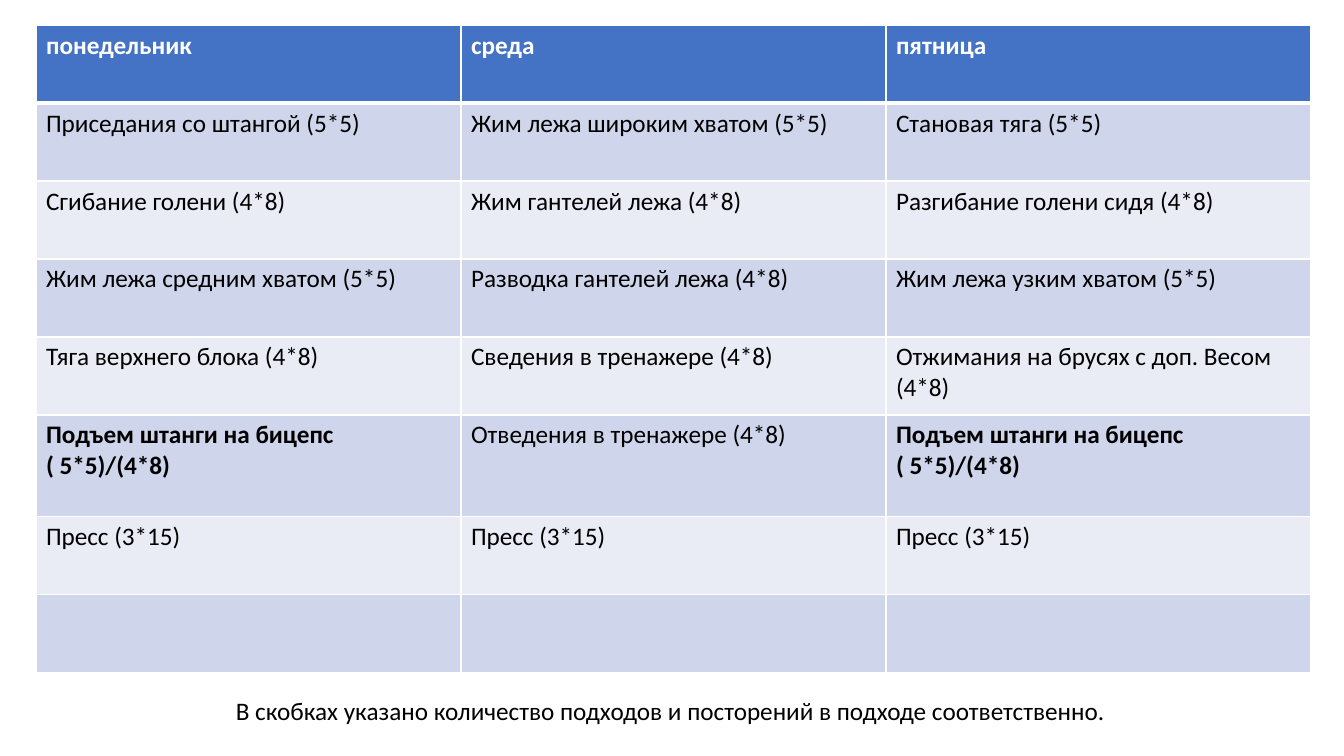
from typing import NamedTuple

from lxml.etree import SubElement
from pptx import Presentation
from pptx.dml.color import RGBColor
from pptx.enum.text import MSO_AUTO_SIZE
from pptx.oxml.ns import qn
from pptx.text.text import TextFrame
from pptx.util import Emu, Pt

SLIDE_WIDTH, SLIDE_HEIGHT = 1344, 756
EMU_PER_PX = 12192000 / SLIDE_WIDTH

WHITE = RGBColor(0xFF, 0xFF, 0xFF)
BLACK = RGBColor(0x00, 0x00, 0x00)
HEADER_BLUE = RGBColor(0x44, 0x72, 0xC4)
BAND_DARK = RGBColor(0xCF, 0xD5, 0xEA)
BAND_LIGHT = RGBColor(0xE9, 0xEB, 0xF5)

FONT_NAME = "Calibri"
FONT_SIZE = Pt(18)

TABLE_LEFT, TABLE_TOP = 36, 25
COLUMN_WIDTH = 425
ROW_HEIGHT, TALL_ROW_HEIGHT = 78, 102

DAYS = ("понедельник", "среда", "пятница")
BICEPS = "Подъем штанги на бицепс\n( 5*5)/(4*8)"
PRESS = "Пресс (3*15)"
NOTE = "В скобках указано количество подходов и посторений в подходе соответственно."


class TrainingRow(NamedTuple):
    texts: tuple[str, ...]
    height: int = ROW_HEIGHT


ROWS = (
    TrainingRow(DAYS),
    TrainingRow(("Приседания со штангой (5*5)", "Жим лежа широким хватом (5*5)",
                 "Становая тяга (5*5)")),
    TrainingRow(("Сгибание голени (4*8)", "Жим гантелей лежа (4*8)",
                 "Разгибание голени сидя (4*8)")),
    TrainingRow(("Жим лежа средним хватом (5*5)", "Разводка гантелей лежа (4*8)",
                 "Жим лежа узким хватом (5*5)")),
    TrainingRow(("Тяга верхнего блока (4*8)", "Сведения в тренажере (4*8)",
                 "Отжимания на брусях с доп. Весом (4*8)")),
    TrainingRow((BICEPS, "Отведения в тренажере (4*8)", BICEPS), TALL_ROW_HEIGHT),
    TrainingRow((PRESS,) * len(DAYS)),
    TrainingRow(("",) * len(DAYS)),
)


def px(length: int) -> Emu:
    return Emu(round(length * EMU_PER_PX))


def write_text(text_frame: TextFrame, text: str, color: RGBColor, bold: bool) -> None:
    text_frame.text = text
    for paragraph in text_frame.paragraphs:
        for run in paragraph.runs:
            run.font.name = FONT_NAME
            run.font.size = FONT_SIZE
            run.font.bold = bold
            run.font.color.rgb = color


def add_borders(cell, top: int, bottom: int) -> None:
    """Draw white cell edges; top and bottom widths are in points."""
    properties = cell._tc.get_or_add_tcPr()
    for tag, width in (("a:lnL", 1), ("a:lnR", 1), ("a:lnT", top), ("a:lnB", bottom)):
        line = SubElement(properties, qn(tag), w=str(Pt(width)))
        fill = SubElement(line, qn("a:solidFill"))
        SubElement(fill, qn("a:srgbClr"), val=str(WHITE))


def add_schedule(slide) -> None:
    total_height = sum(row.height for row in ROWS)
    table = slide.shapes.add_table(
        len(ROWS), len(DAYS), px(TABLE_LEFT), px(TABLE_TOP),
        px(COLUMN_WIDTH * len(DAYS)), px(total_height)).table
    for column in table.columns:
        column.width = px(COLUMN_WIDTH)
    for row_index, row in enumerate(ROWS):
        table.rows[row_index].height = px(row.height)
        is_header = row_index == 0
        band = BAND_DARK if row_index % 2 else BAND_LIGHT
        for column_index, text in enumerate(row.texts):
            cell = table.cell(row_index, column_index)
            write_text(cell.text_frame, text, WHITE if is_header else BLACK,
                       is_header or text == BICEPS)
            add_borders(cell, top=3 if row_index == 1 else 1,
                        bottom=3 if is_header else 1)
            cell.fill.solid()
            cell.fill.fore_color.rgb = HEADER_BLUE if is_header else band


def add_note(slide) -> None:
    text_frame = slide.shapes.add_textbox(px(226), px(690), px(893), px(40)).text_frame
    text_frame.word_wrap = False
    text_frame.auto_size = MSO_AUTO_SIZE.SHAPE_TO_FIT_TEXT
    write_text(text_frame, NOTE, BLACK, False)


def main() -> None:
    presentation = Presentation()
    presentation.slide_width = px(SLIDE_WIDTH)
    presentation.slide_height = px(SLIDE_HEIGHT)
    blank_layout = presentation.slide_layouts[6]
    slide = presentation.slides.add_slide(blank_layout)
    add_schedule(slide)
    add_note(slide)
    presentation.save("out.pptx")


if __name__ == "__main__":
    main()
